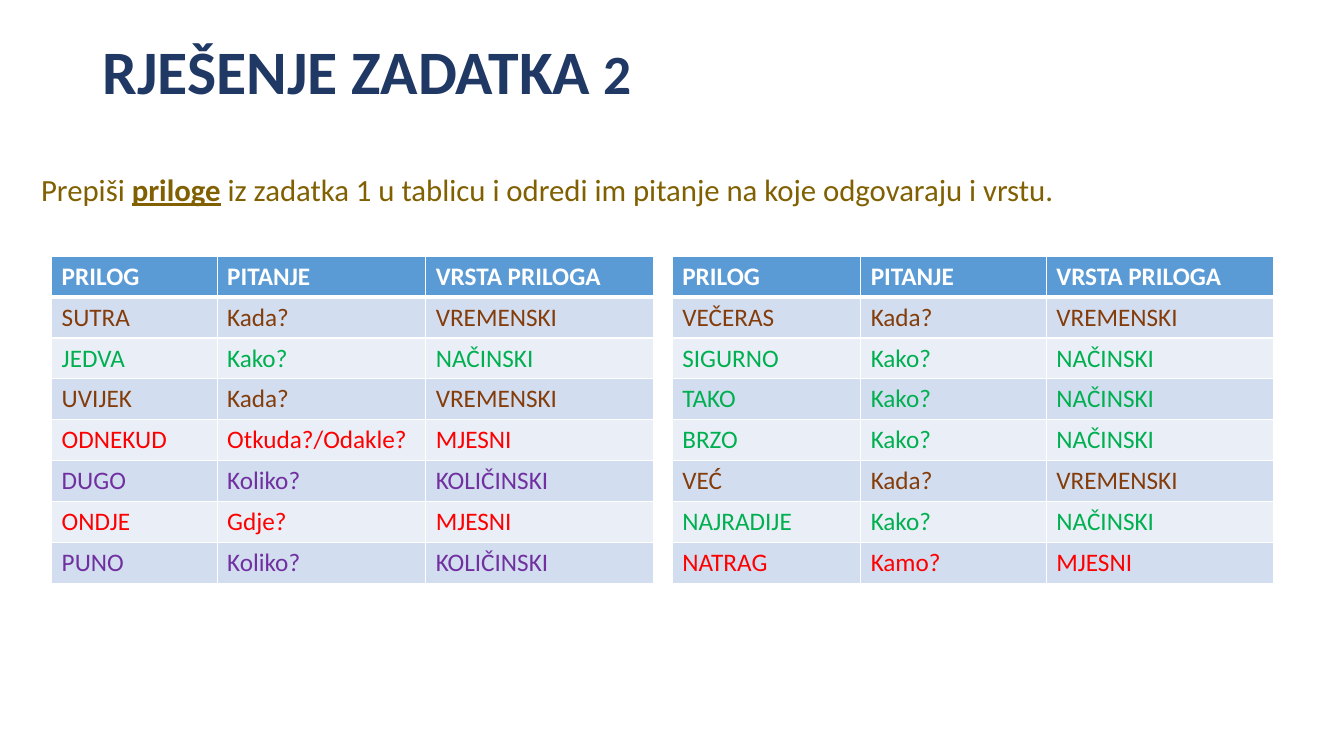
from lxml.etree import SubElement
from pptx import Presentation
from pptx.dml.color import RGBColor
from pptx.enum.text import MSO_ANCHOR
from pptx.oxml.ns import qn
from pptx.util import Pt

FONT = "Calibri"
WHITE, NAVY, OLIVE = "FFFFFF", "203864", "806000"
HEADER_FILL, BANDS = "5B9BD5", ("D2DEEF", "EAEFF7")
HEADER = ("PRILOG", "PITANJE", "VRSTA PRILOGA")
KIND_COLORS = {
    "VREMENSKI": "843C0B",
    "NAČINSKI": "00B050",
    "MJESNI": "FF0000",
    "KOLIČINSKI": "7030A0",
}
LEFT_ROWS = [
    ("SUTRA", "Kada?", "VREMENSKI"),
    ("JEDVA", "Kako?", "NAČINSKI"),
    ("UVIJEK", "Kada?", "VREMENSKI"),
    ("ODNEKUD", "Otkuda?/Odakle?", "MJESNI"),
    ("DUGO", "Koliko?", "KOLIČINSKI"),
    ("ONDJE", "Gdje?", "MJESNI"),
    ("PUNO", "Koliko?", "KOLIČINSKI"),
]
RIGHT_ROWS = [
    ("VEČERAS", "Kada?", "VREMENSKI"),
    ("SIGURNO", "Kako?", "NAČINSKI"),
    ("TAKO", "Kako?", "NAČINSKI"),
    ("BRZO", "Kako?", "NAČINSKI"),
    ("VEĆ", "Kada?", "VREMENSKI"),
    ("NAJRADIJE", "Kako?", "NAČINSKI"),
    ("NATRAG", "Kamo?", "MJESNI"),
]


def rgb(hex_color):
    """Turn a hex string into a colour."""
    return RGBColor.from_string(hex_color)


def style_run(r, size, color, bold=False, underline=False):
    """Format one run of text."""
    r.font.name = FONT
    r.font.size = Pt(size)
    r.font.color.rgb = rgb(color)
    r.font.bold = bold
    r.font.underline = underline


def add_text(s, box, runs, anchor=MSO_ANCHOR.TOP):
    """Place a one-paragraph text box made of (text, style) runs."""
    tf = s.shapes.add_textbox(*map(Pt, box)).text_frame
    tf.word_wrap = True
    tf.vertical_anchor = anchor
    p = tf.paragraphs[0]
    p.line_spacing = 0.9
    for text, style in runs:
        r = p.add_run()
        r.text = text
        style_run(r, **style)


def add_borders(cell, top, bottom):
    """Draw white borders around a cell."""
    tcPr = cell._tc.get_or_add_tcPr()
    for side, width in (("L", 1), ("R", 1), ("T", top), ("B", bottom)):
        ln = SubElement(tcPr, qn(f"a:ln{side}"), w=str(Pt(width)))
        fill = SubElement(ln, qn("a:solidFill"))
        SubElement(fill, qn("a:srgbClr"), val=WHITE)


def add_adverb_table(s, box, widths, rows):
    """Place a table of adverbs whose text colour follows their kind."""
    table = s.shapes.add_table(len(rows) + 1, len(HEADER), *map(Pt, box)).table
    for column, width in zip(table.columns, widths):
        column.width = Pt(width)
    for i, values in enumerate([HEADER] + rows):
        table.rows[i].height = Pt(box[3] / (len(rows) + 1))
        is_header = i == 0
        color = KIND_COLORS.get(values[-1], WHITE)
        for j, value in enumerate(values):
            cell = table.cell(i, j)
            add_borders(cell, 3 if i == 1 else 1, 3 if is_header else 1)
            cell.fill.solid()
            cell.fill.fore_color.rgb = rgb(HEADER_FILL if is_header else BANDS[(i - 1) % 2])
            p = cell.text_frame.paragraphs[0]
            p.text = value
            style_run(p.runs[0], 18, color, bold=is_header)


def build_slide(prs):
    """Build the solution slide."""
    s = prs.slides.add_slide(prs.slide_layouts[6])
    title = dict(color=NAVY, bold=True)
    add_text(s, (66.2, 28.8, 828, 48.2), [
        ("RJEŠENJE ZADATKA", dict(title, size=44.1)),
        (" 2", dict(title, size=39.6)),
    ], MSO_ANCHOR.MIDDLE)
    body = dict(size=22, color=OLIVE)
    add_text(s, (22.3, 121.3, 905, 34), [
        ("Prepiši ", body),
        ("priloge", dict(body, bold=True, underline=True)),
        (" iz zadatka 1 u tablicu i odredi im pitanje na koje odgovaraju i vrstu.", body),
    ])
    for left, widths, rows in (
        (36.9, (118.2, 149, 162.6), LEFT_ROWS),
        (480.2, (134.6, 132.6, 162.6), RIGHT_ROWS),
    ):
        add_adverb_table(s, (left, 183, sum(widths), 233.6), widths, rows)


def main():
    """Create and save the presentation."""
    prs = Presentation()
    prs.slide_width, prs.slide_height = Pt(960), Pt(540)
    build_slide(prs)
    prs.save("out.pptx")


if __name__ == "__main__":
    main()
